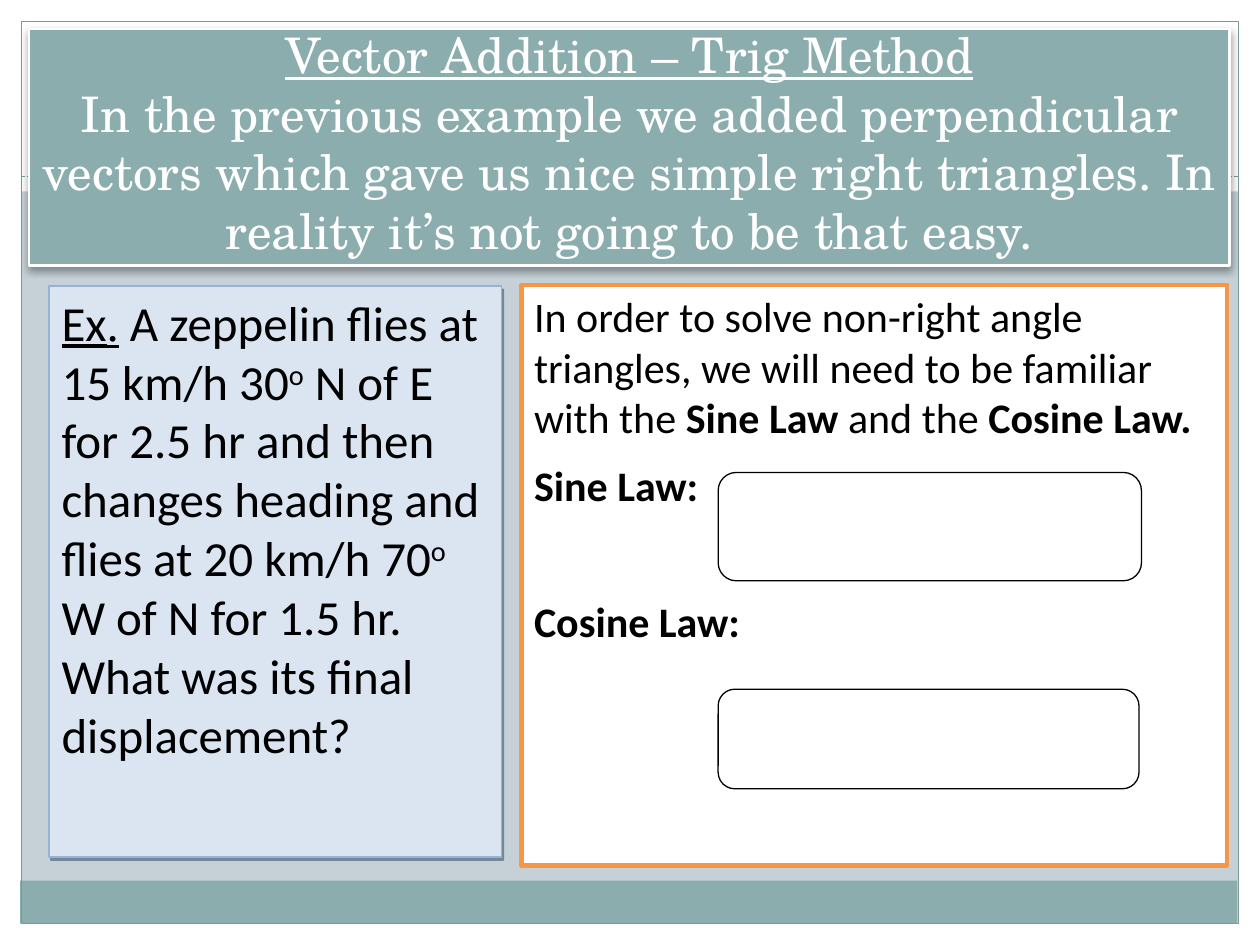
"""Build the slide on the trigonometric method of vector addition."""
from dataclasses import dataclass
from typing import Optional

from lxml import etree
from pptx import Presentation
from pptx.dml.color import RGBColor
from pptx.enum import dml, shapes, text
from pptx.oxml import ns
from pptx import util as u

COLUMNS, ROWS = 100, 75
CELL = u.Inches(0.1)
WHITE, BLACK, TEAL, EDGE = "FFFFFF", "000000", "8CADAE", "7C999A"
RECT = shapes.MSO_SHAPE.RECTANGLE
ROUNDED = shapes.MSO_SHAPE.ROUNDED_RECTANGLE


@dataclass
class Shadow:
    color: str
    alpha: int
    blur: float
    distance: float
    angle: int


@dataclass
class Panel:
    left: float
    top: float
    width: float
    height: float
    fill: Optional[str] = None
    line: Optional[str] = None
    weight: float = 0.75
    kind: int = RECT
    shadow: Optional[Shadow] = None


@dataclass
class Span:
    words: str
    bold: bool = False
    underline: bool = False
    raised: bool = False
    font: Optional[str] = None


@dataclass
class Para:
    spans: list[Span]
    after: float = 10


FRAME = [
    Panel(0, 73.3, 100, 1.7, WHITE),
    Panel(0, 0, 100, 15.2, WHITE),
    Panel(0, 0, 1.7, 75, WHITE),
    Panel(98.3, 0, 1.7, 75, WHITE),
    Panel(1.6, 69.9, 96.6, 3.4, TEAL),
    Panel(1.7, 1.7, 96.6, 71.6, None, EDGE),
]
TITLE = Panel(2.3, 2.3, 95.3, 18.8, TEAL, WHITE, 1.57, shadow=Shadow(BLACK, 35, 4, 2, 90))
EXAMPLE = Panel(3.9, 22.7, 35.9, 45.3, "DBE5F1", "95B3D7", 1,
                shadow=Shadow("243F60", 50, 0, 2.2, 63))
LAWS = Panel(41.4, 22.6, 56, 46.1, WHITE, "F79646", 2.5)
ANSWERS = [
    Panel(57, 37.5, 33.6, 8.6, WHITE, BLACK, kind=ROUNDED),
    Panel(57, 54.7, 33.4, 7.9, WHITE, BLACK, kind=ROUNDED),
]

TITLE_TEXT = [
    Para([Span("Vector Addition – Trig Method", underline=True)], 0),
    Para([Span("In the previous example we added perpendicular vectors which gave us nice "
               "simple right triangles. In reality it’s not going to be that easy.")], 0),
]
EXAMPLE_TEXT = [Para([
    Span("Ex", underline=True),
    Span(".", underline=True, font="Times New Roman"),
    Span(" A zeppelin flies at 15 km/h 30"),
    Span("o", raised=True),
    Span(" N of E for 2.5 hr and then changes heading and flies at 20 km/h 70"),
    Span("o", raised=True),
    Span(" W of N for 1.5 hr. What was its final displacement?"),
])]
LAWS_TEXT = [
    Para([
        Span("In order to solve non-right angle triangles, we will need to be familiar with the "),
        Span("Sine Law", bold=True),
        Span(" and the "),
        Span("Cosine Law.", bold=True),
    ]),
    Para([Span("Sine Law:", bold=True)], 49),
    Para([Span("Cosine Law:", bold=True)]),
]


def paint(target, color: str) -> None:
    """Give a fill a solid colour."""
    target.solid()
    target.fore_color.rgb = RGBColor.from_string(color)


def cast_shadow(box, shadow: Shadow) -> None:
    """Add an outer shadow to a shape."""
    effects = box._element.spPr.find(ns.qn("a:effectLst"))
    outer = etree.SubElement(effects, ns.qn("a:outerShdw"), blurRad=str(u.Pt(shadow.blur)),
                             dist=str(u.Pt(shadow.distance)), dir=str(shadow.angle * 60000),
                             algn="tl", rotWithShape="0")
    color = etree.SubElement(outer, ns.qn("a:srgbClr"), val=shadow.color)
    etree.SubElement(color, ns.qn("a:alpha"), val=str(shadow.alpha * 1000))


def draw_panel(page, panel: Panel):
    """Draw one panel and return its shape."""
    box = page.shapes.add_shape(panel.kind, *(round(cells * CELL) for cells in (
        panel.left, panel.top, panel.width, panel.height)))
    box.shadow.inherit = False
    if panel.fill:
        paint(box.fill, panel.fill)
    else:
        box.fill.background()
    if panel.line:
        paint(box.line.fill, panel.line)
        box.line.width = u.Pt(panel.weight)
    else:
        box.line.fill.background()
    if panel.shadow:
        cast_shadow(box, panel.shadow)
    return box


def write(box, paras: list[Para], font: str, size: float, color: str,
          align=text.PP_ALIGN.LEFT, anchor=text.MSO_ANCHOR.TOP) -> None:
    """Fill a shape with formatted paragraphs."""
    frame = box.text_frame
    frame.word_wrap = True
    frame.vertical_anchor = anchor
    for index, para in enumerate(paras):
        paragraph = frame.add_paragraph() if index else frame.paragraphs[0]
        paragraph.alignment = align
        paragraph.space_after = u.Pt(para.after)
        for span in para.spans:
            run = paragraph.add_run()
            run.text = span.words
            run.font.name = span.font or font
            run.font.size = u.Pt(size)
            run.font.bold = span.bold
            run.font.underline = span.underline
            paint(run.font.fill, color)
            if span.raised:
                run._r.get_or_add_rPr().set("baseline", "30000")


def draw_rule(page, left: float, right: float, row: float) -> None:
    """Draw the dashed rule behind the title."""
    rule = page.shapes.add_connector(shapes.MSO_CONNECTOR.STRAIGHT, *(
        round(cells * CELL) for cells in (left, row, right, row)))
    paint(rule.line.fill, EDGE)
    rule.line.width = u.Pt(0.75)
    rule.line.dash_style = dml.MSO_LINE.SQUARE_DOT
    etree.SubElement(rule._element.spPr, ns.qn("a:effectLst"))


def main() -> None:
    """Build and save the deck."""
    deck = Presentation()
    deck.slide_width, deck.slide_height = COLUMNS * CELL, ROWS * CELL
    page = deck.slides.add_slide(deck.slide_layouts[6])
    paint(page.background.fill, "C5D1D7")
    for panel in FRAME:
        draw_panel(page, panel)
    draw_rule(page, 1.7, 98.3, 14)
    write(draw_panel(page, TITLE), TITLE_TEXT, "TeX Gyre Schola", 28, WHITE,
          text.PP_ALIGN.CENTER, text.MSO_ANCHOR.BOTTOM)
    write(draw_panel(page, EXAMPLE), EXAMPLE_TEXT, "Calibri", 28, BLACK)
    write(draw_panel(page, LAWS), LAWS_TEXT, "Calibri", 24, BLACK)
    for answer in ANSWERS:
        draw_panel(page, answer)
    deck.save("out.pptx")


if __name__ == "__main__":
    main()
